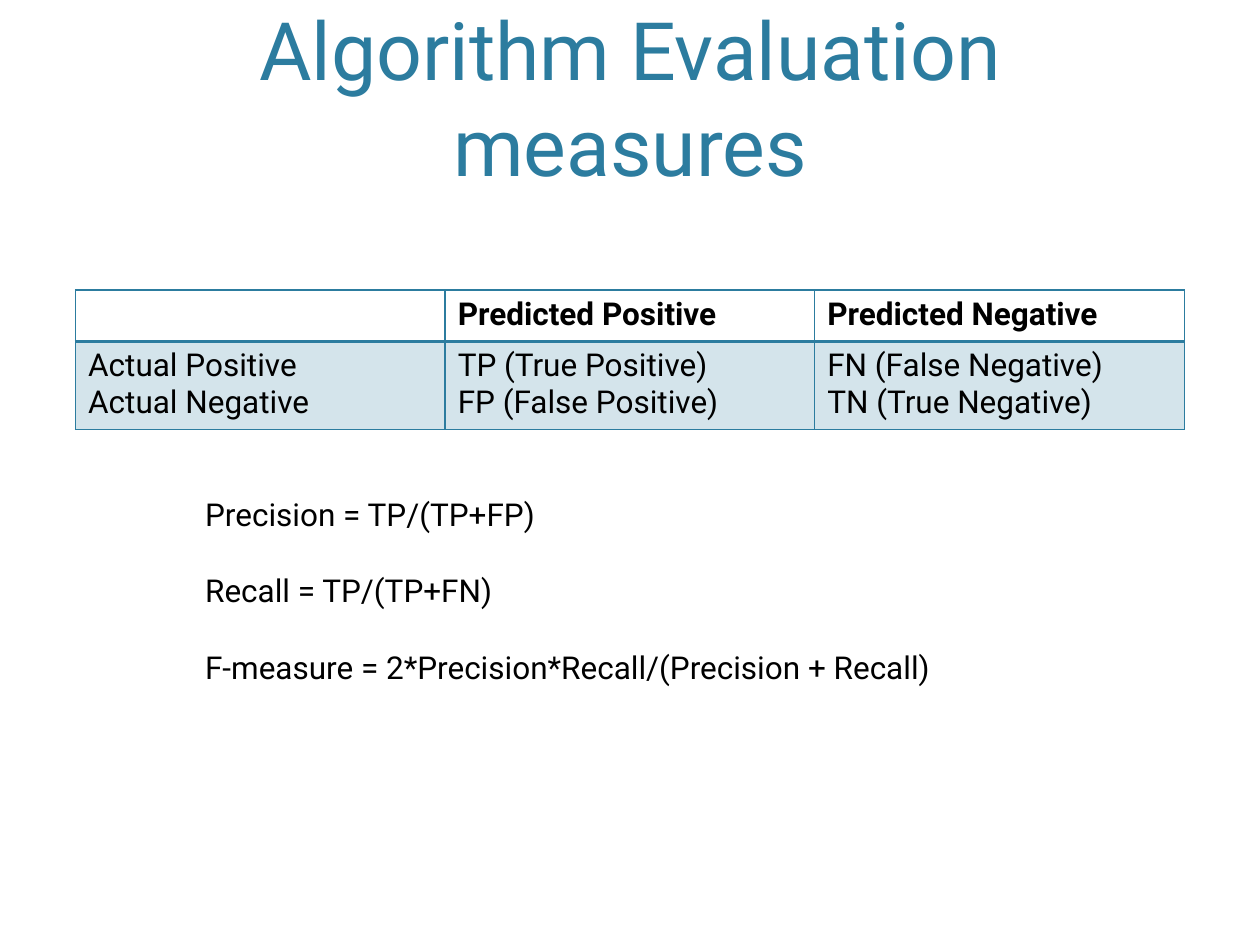
from lxml import etree
from pptx import Presentation
from pptx.dml.color import RGBColor
from pptx.enum import text
from pptx.oxml import ns
from pptx.util import Inches, Pt

FONT = "Roboto"
COLORS = {"accent": "2C7C9F", "ink": "000000"}
TITLE = "Algorithm Evaluation measures"
CONFUSION_MATRIX = [
    ["", "Predicted Positive", "Predicted Negative"],
    ["Actual Positive\nActual Negative",
     "TP (True Positive)\nFP (False Positive)",
     "FN (False Negative)\nTN (True Negative)"],
]
FORMULAS = [
    "Precision = TP/(TP+FP)",
    "Recall = TP/(TP+FN)",
    "F-measure = 2*Precision*Recall/(Precision + Recall)",
]
LEFT, WIDTH = 0.6, 8.8
ROW_HEIGHTS = [0.41, 0.7]
TINT_OPACITY = 20


def style_text(frame, size, color, bold=False):
    for para in frame.paragraphs:
        para.font.size = Pt(size)
        for span in para.runs:
            span.font.name = FONT
            span.font.size = Pt(size)
            span.font.bold = bold
            span.font.color.rgb = RGBColor.from_string(COLORS[color])


def add_text(page, area, content, size, color):
    box = page.shapes.add_textbox(*(Inches(value) for value in area))
    box.text_frame.text = content
    style_text(box.text_frame, size, color)
    return box.text_frame


def set_borders(cell, widths):
    """Draw accent borders; widths maps a side (L, R, T, B) to points."""
    properties = cell._tc.get_or_add_tcPr()
    for position, (side, width) in enumerate(widths.items()):
        line = etree.Element(ns.qn(f"a:ln{side}"), w=str(Pt(width)))
        fill = etree.SubElement(line, ns.qn("a:solidFill"))
        etree.SubElement(fill, ns.qn("a:srgbClr"), val=COLORS["accent"])
        properties.insert(position, line)


def tint(cell):
    cell.fill.solid()
    cell.fill.fore_color.rgb = RGBColor.from_string(COLORS["accent"])
    color = cell._tc.tcPr.find(".//" + ns.qn("a:srgbClr"))
    etree.SubElement(color, ns.qn("a:alpha"), val=str(TINT_OPACITY * 1000))


def add_matrix(page, top):
    table = page.shapes.add_table(
        len(CONFUSION_MATRIX), len(CONFUSION_MATRIX[0]), Inches(LEFT),
        Inches(top), Inches(WIDTH), Inches(sum(ROW_HEIGHTS))).table
    table.horz_banding = False
    for r, values in enumerate(CONFUSION_MATRIX):
        header = r == 0
        table.rows[r].height = Inches(ROW_HEIGHTS[r])
        for c, value in enumerate(values):
            cell = table.cell(r, c)
            cell.text = value
            style_text(cell.text_frame, 18, "ink", bold=header)
            if header:
                cell.fill.background()
            else:
                tint(cell)
            set_borders(cell, {"L": 1, "R": 1, "T": 1 if header else 2,
                               "B": 2 if header else 1})


def main():
    deck = Presentation()
    deck.slide_width, deck.slide_height = Inches(10), Inches(7.5)
    page = deck.slides.add_slide(deck.slide_layouts[6])

    title = add_text(page, (LEFT, 0.12, WIDTH, 1.46), TITLE, 46, "accent")
    title.word_wrap = True
    title.vertical_anchor = text.MSO_ANCHOR.BOTTOM
    title.paragraphs[0].alignment = text.PP_ALIGN.CENTER

    add_matrix(page, top=2.3)

    formulas = add_text(page, (1.53, 3.88, 6.46, 1.62),
                        "\n".join(FORMULAS), 18, "ink")
    formulas.word_wrap = False
    for para in formulas.paragraphs[1:]:
        para.space_before = Pt(22)

    deck.save("out.pptx")


if __name__ == "__main__":
    main()
